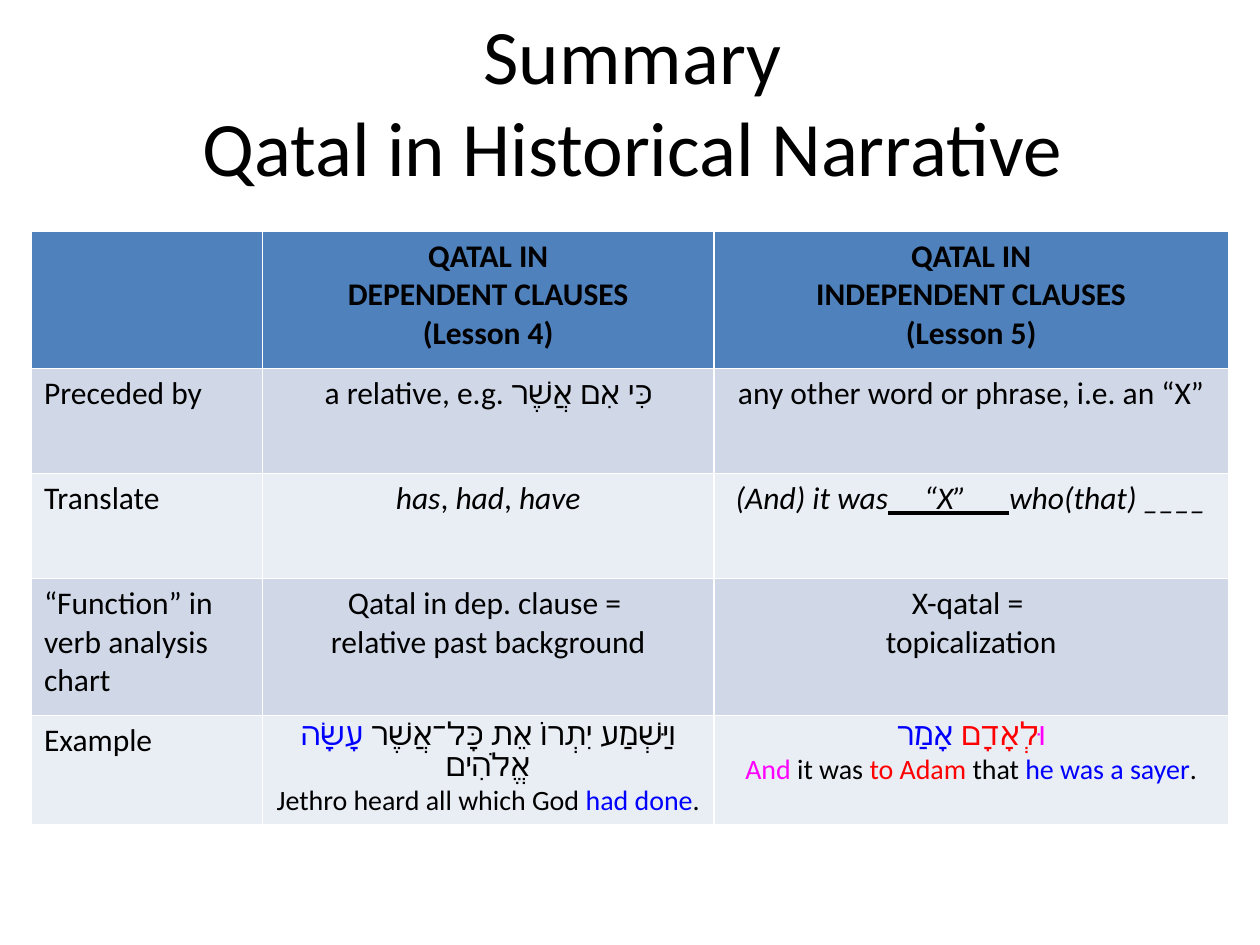
from lxml import etree
from pptx import Presentation
from pptx import util as u
from pptx.dml import color
from pptx.enum import text
from pptx.oxml import ns

BLACK, BLUE, RED, MAGENTA = "000000", "0000FF", "FF0000", "FF00FF"
HEADER_FILL, BAND_FILLS = "4F81BD", ("D0D8E8", "E9EDF4")
HEBREW_FONT = "Roboto"
COLUMN_WIDTHS = (132, 258, 294)
ROW_HEIGHTS = (78.5, 60, 60, 78.5, 54)


def rgb(value):
    return color.RGBColor.from_string(value)


def part(words, hue=BLACK, **style):
    return {"words": words, "hue": hue, **style}


def hebrew(words, hue=BLACK):
    return part(words, hue, font=HEBREW_FONT)


def small(words, hue=BLACK):
    return part(words, hue, size=16)


def italic(words, underline=False):
    return part(words, italic=True, underline=underline)


def lines(*wordings, **style):
    return [[part(words, **style)] for words in wordings]


ROWS = [
    [[],
     lines("QATAL IN", "DEPENDENT CLAUSES", "(Lesson 4)", bold=True),
     lines("QATAL IN", "INDEPENDENT CLAUSES", "(Lesson 5)", bold=True)],
    [lines("Preceded by"),
     [[part("a relative, e.g. "), hebrew("כִּי אִם אֲשֶׁר")]],
     lines("any other word or phrase, i.e. an “X”")],
    [lines("Translate"),
     [[italic("has"), part(", "), italic("had"), part(", "), italic("have")]],
     [[italic("(And) it was"), italic("     “X”      ", underline=True),
       italic("who(that) ____")]]],
    [lines("“Function” in", "verb analysis chart"),
     lines("Qatal in dep. clause = ", "relative past background"),
     lines("X-qatal = ", "topicalization")],
    [lines("Example"),
     [[hebrew("וַיִּשְׁמַע יִתְרוֹ אֵת כָּל־אֲשֶׁר "), hebrew("עָשָׂה ", BLUE),
       hebrew("אֱלֹהִים")],
      [small("Jethro heard all which God "), small("had done", BLUE), small(".")]],
     [[hebrew("וּ", MAGENTA), hebrew("לְאָדָם ", RED), hebrew("אָמַר", BLUE)],
      [small("And", MAGENTA), small(" it was "), small("to Adam ", RED),
       small("that "), small("he was a sayer", BLUE), small(".")]]],
]
RIGHT_TO_LEFT_CELL = (4, 2)


def format_run(run, words, hue, font="Calibri", size=18, bold=False,
               italic=False, underline=False):
    run.text = words
    run.font.size = u.Pt(size)
    run.font.bold = bold
    run.font.italic = italic
    run.font.underline = underline
    run.font.color.rgb = rgb(hue)
    run.font.name = font
    if font == HEBREW_FONT:
        etree.SubElement(run.font._element, ns.qn("a:cs"), typeface=font)


def fill_cell(cell, paragraphs, fill, alignment):
    cell.fill.solid()
    cell.fill.fore_color.rgb = rgb(fill)
    frame = cell.text_frame
    for index, parts in enumerate(paragraphs):
        paragraph = frame.add_paragraph() if index else frame.paragraphs[0]
        paragraph.alignment = alignment
        if all(piece.get("font") == HEBREW_FONT for piece in parts):
            paragraph.line_spacing = u.Pt(17.7)
        for piece in parts:
            format_run(paragraph.add_run(), **piece)


def add_title(slide, left, top, width, height):
    title = slide.shapes.title
    title.left, title.top = u.Pt(left), u.Pt(top)
    title.width, title.height = u.Pt(width), u.Pt(height)
    frame = title.text_frame
    frame.text = "Summary\vQatal in Historical Narrative"
    frame.vertical_anchor = text.MSO_ANCHOR.MIDDLE
    paragraph = frame.paragraphs[0]
    paragraph.alignment = text.PP_ALIGN.CENTER
    for run in paragraph.runs:
        run.font.size = u.Pt(44)
        run.font.name = "Calibri"
        run.font.color.rgb = rgb(BLACK)


def add_summary_table(slide, left, top):
    table = slide.shapes.add_table(
        len(ROWS), len(COLUMN_WIDTHS), u.Pt(left), u.Pt(top),
        u.Pt(sum(COLUMN_WIDTHS)), u.Pt(sum(ROW_HEIGHTS))).table
    for column, width in zip(table.columns, COLUMN_WIDTHS):
        column.width = u.Pt(width)
    for row_index, (row, height) in enumerate(zip(table.rows, ROW_HEIGHTS)):
        row.height = u.Pt(height)
        fill = BAND_FILLS[(row_index - 1) % 2] if row_index else HEADER_FILL
        for column_index, paragraphs in enumerate(ROWS[row_index]):
            alignment = text.PP_ALIGN.CENTER if column_index else text.PP_ALIGN.LEFT
            fill_cell(table.cell(row_index, column_index), paragraphs, fill, alignment)
    hebrew_paragraph = table.cell(*RIGHT_TO_LEFT_CELL).text_frame.paragraphs[0]
    hebrew_paragraph._p.get_or_add_pPr().set("rtl", "1")


def main():
    presentation = Presentation()
    presentation.slide_width, presentation.slide_height = u.Pt(720), u.Pt(540)
    slide = presentation.slides.add_slide(presentation.slide_layouts[5])
    add_title(slide, 37.5, 0, 648, 114)
    add_summary_table(slide, 18, 132)
    presentation.save("out.pptx")


if __name__ == "__main__":
    main()
